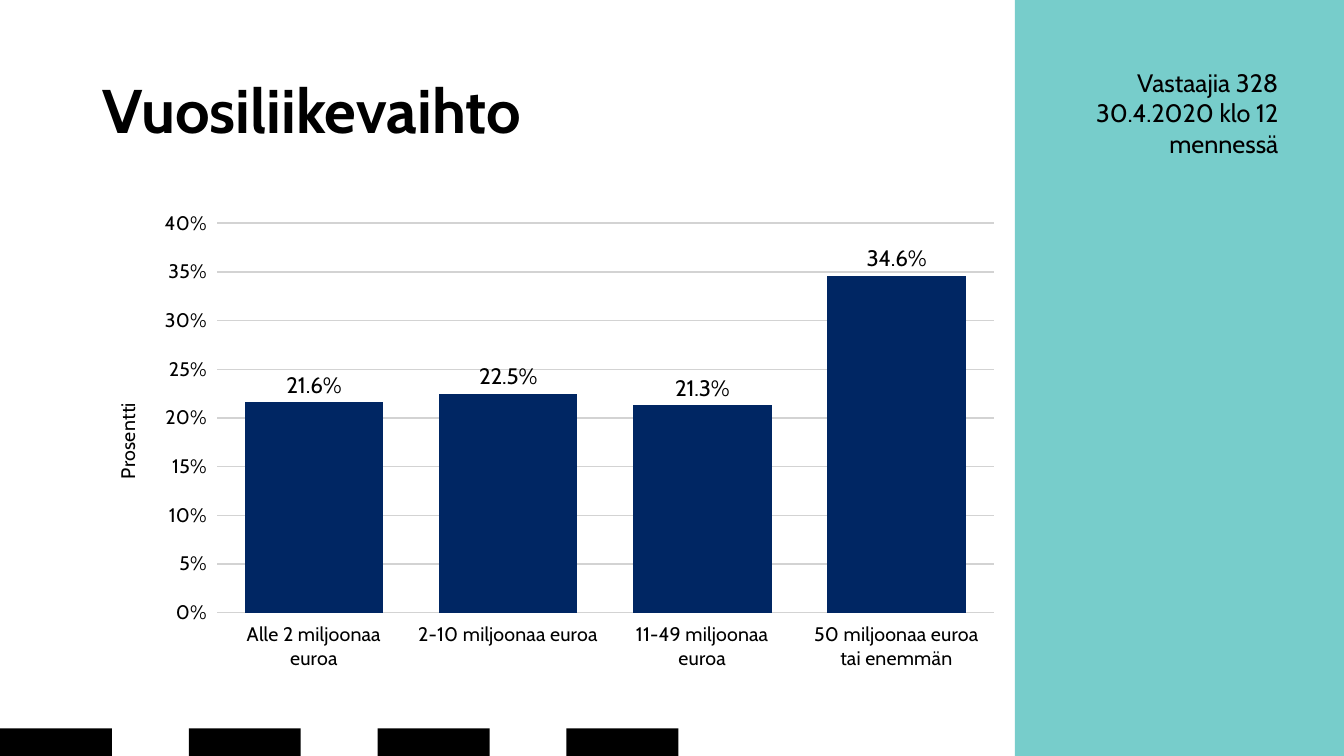
from pptx import Presentation
from pptx.chart.data import CategoryChartData
from pptx.dml.color import RGBColor
from pptx.enum.chart import XL_CHART_TYPE, XL_LABEL_POSITION, XL_TICK_MARK
from pptx.enum.shapes import MSO_SHAPE
from pptx.enum.text import MSO_ANCHOR, MSO_AUTO_SIZE, PP_ALIGN
from pptx.oxml import parse_xml
from pptx.oxml.ns import nsdecls, qn
from pptx.util import Inches, Pt

WIDE, HIGH = Inches(13.33), Inches(7.5)
FACE = "Cabin"
HUES = {"teal": "77CDCB", "ink": "000000", "navy": "002663",
        "edge": "4682B4", "grid": "D3D3D3"}
SHARES = {
    "Alle 2 miljoonaa euroa": 0.216,
    "2-10 miljoonaa euroa": 0.225,
    "11-49 miljoonaa euroa": 0.213,
    "50 miljoonaa euroa tai enemmän": 0.346,
}


def hue(name):
    """Return a named colour."""
    return RGBColor.from_string(HUES[name])


def area(left, top, width, height):
    """Turn percentages of the slide into lengths."""
    return (int(WIDE * left / 100), int(HIGH * top / 100),
            int(WIDE * width / 100), int(HIGH * height / 100))


def style(font, size, bold=False):
    """Set the common face and colour on a font."""
    font.name, font.size, font.bold = FACE, Pt(size), bold
    font.color.rgb = hue("ink")


def add_block(slide, place, name):
    """Add a plain filled rectangle."""
    block = slide.shapes.add_shape(MSO_SHAPE.RECTANGLE, *area(*place))
    block.shadow.inherit = False
    block.fill.solid()
    block.fill.fore_color.rgb = hue(name)
    block.line.fill.background()


def set_title(slide, text, place):
    """Place and format the slide title."""
    title = slide.shapes.title
    title.left, title.top, title.width, title.height = area(*place)
    frame = title.text_frame
    frame.text = text
    frame.vertical_anchor = MSO_ANCHOR.MIDDLE
    para = frame.paragraphs[0]
    para.alignment, para.line_spacing = PP_ALIGN.LEFT, 0.9
    style(para.runs[0].font, 44, True)


def add_note(slide, text, place):
    """Add a right-aligned note."""
    frame = slide.shapes.add_textbox(*area(*place)).text_frame
    frame.word_wrap = True
    frame.auto_size = MSO_AUTO_SIZE.SHAPE_TO_FIT_TEXT
    frame.text = text
    for para in frame.paragraphs:
        para.alignment = PP_ALIGN.RIGHT
        style(para.runs[0].font, 18)


def set_plot(chart, **sides):
    """Fix the inner plot area in percentages of the chart."""
    plot = chart.plots[0]._element.getparent()
    for old in plot.findall(qn("c:layout")):
        plot.remove(old)
    parts = "".join(f'<c:{side} val="{part / 100}"/>'
                    for side, part in sides.items())
    plot.insert(0, parse_xml(
        f'<c:layout {nsdecls("c")}><c:manualLayout>'
        '<c:layoutTarget val="inner"/><c:xMode val="edge"/>'
        f'<c:yMode val="edge"/>{parts}</c:manualLayout></c:layout>'))


def set_axes(chart):
    """Format both axes, the grid and the value title."""
    for axis in (chart.category_axis, chart.value_axis):
        axis.major_tick_mark = XL_TICK_MARK.CROSS
        axis.format.line.fill.background()
        style(axis.tick_labels.font, 14)
    axis = chart.value_axis
    axis.minimum_scale, axis.maximum_scale, axis.major_unit = 0, 0.4, 0.05
    axis.tick_labels.number_format = "0%"
    axis.tick_labels.number_format_is_linked = False
    axis.has_major_gridlines = True
    line = axis.major_gridlines.format.line
    line.color.rgb, line.width = hue("grid"), Pt(1)
    frame = axis.axis_title.text_frame
    frame.text = "Prosentti"
    style(frame.paragraphs[0].runs[0].font, 14)
    frame._txBody.bodyPr.set("rot", "-5400000")
    frame._txBody.bodyPr.set("vert", "horz")


def set_bars(chart):
    """Format the columns and their labels."""
    plot = chart.plots[0]
    plot.gap_width, plot.vary_by_categories = 40, False
    bars = plot.series[0]
    bars.format.line.color.rgb = hue("edge")
    bars.format.line.width = Pt(0.75)
    points = [bars.points[i] for i in range(len(SHARES))]
    for item in [bars, *points]:
        item.format.fill.solid()
        item.format.fill.fore_color.rgb = hue("navy")
    labels = bars.data_labels
    labels.show_value = True
    labels.number_format, labels.number_format_is_linked = "0.0%", False
    labels.position = XL_LABEL_POSITION.OUTSIDE_END
    style(labels.font, 16)


def add_columns(slide, place):
    """Add the column chart of turnover classes."""
    data = CategoryChartData()
    data.categories = list(SHARES)
    data.add_series("Series 1", list(SHARES.values()))
    chart = slide.shapes.add_chart(
        XL_CHART_TYPE.COLUMN_CLUSTERED, *area(*place), data).chart
    chart.has_title = chart.has_legend = False
    style(chart.font, 18)
    set_axes(chart)
    set_bars(chart)
    set_plot(chart, x=13.5, y=4.5, w=84.5, h=81.2)


def main():
    """Build and save the slide."""
    deck = Presentation()
    deck.slide_width, deck.slide_height = WIDE, HIGH
    slide = deck.slides.add_slide(deck.slide_layouts[5])
    add_block(slide, (75.52, 0, 24.48, 100), "teal")
    for i in range(4):
        add_block(slide, (i * 14.05, 96.35, 8.33, 3.65), "ink")
    set_title(slide, "Vuosiliikevaihto", (6.9, 5.33, 86.25, 19.33))
    add_note(slide, "Vastaajia 328\n30.4.2020 klo 12 mennessä",
             (80.33, 8.27, 15.53, 13.47))
    add_columns(slide, (6.9, 26.67, 68.4, 63.47))
    deck.save("out.pptx")


if __name__ == "__main__":
    main()
